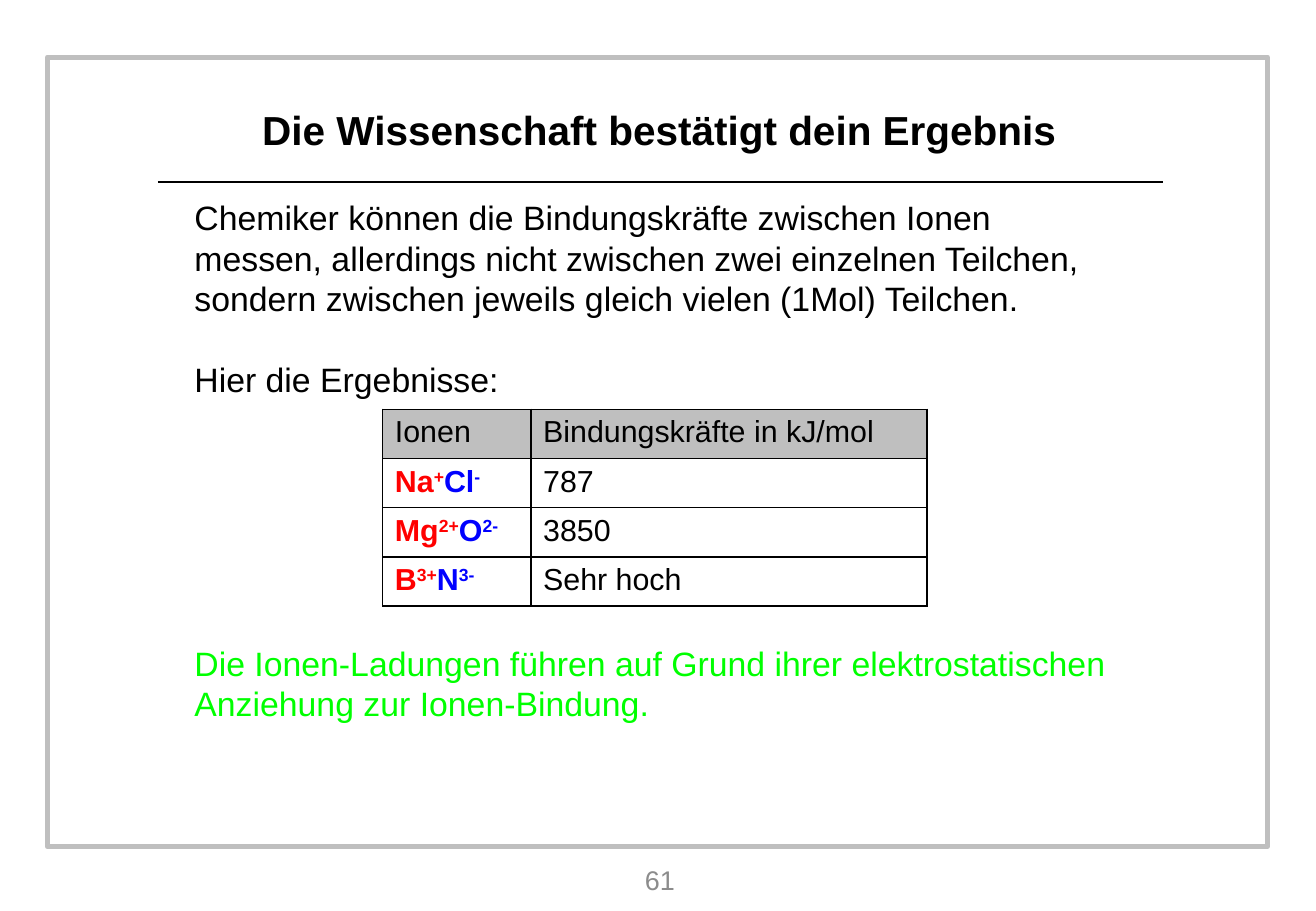
from lxml import etree
from pptx import Presentation
from pptx.dml import color
from pptx.enum import shapes, text
from pptx.oxml import ns
from pptx.util import Inches, Pt

BLACK, GREY, RED, BLUE, GREEN = "000000", "BFBFBF", "FF0000", "0000FF", "00FF00"
IONS = [
    (("Na", "+"), ("Cl", "-"), "787"),
    (("Mg", "2+"), ("O", "2-"), "3850"),
    (("B", "3+"), ("N", "3-"), "Sehr hoch"),
]
BODY = [
    ("Chemiker können die Bindungskräfte zwischen Ionen messen, allerdings nicht "
     "zwischen zwei einzelnen Teilchen, sondern zwischen jeweils gleich vielen "
     "(1Mol) Teilchen.", BLACK, 0),
    ("Hier die Ergebnisse:", BLACK, 1),
    ("Die Ionen-Ladungen führen auf Grund ihrer elektrostatischen Anziehung zur "
     "Ionen-Bindung.", GREEN, 6),
]
LINE_PITCH = 24


def rgb(value):
    """Turn a hex string into a colour."""
    return color.RGBColor.from_string(value)


def style(span, size, shade=BLACK, bold=False):
    """Format the font of one run."""
    span.font.name = "Arial"
    span.font.size = Pt(size)
    span.font.bold = bold
    span.font.color.rgb = rgb(shade)


def place(shape, left, top, width, height):
    """Move and size a shape, in inches."""
    shape.left, shape.top = Inches(left), Inches(top)
    shape.width, shape.height = Inches(width), Inches(height)


def add_frame(page):
    """Draw the grey page frame and the rule under the title."""
    frame = page.shapes.add_shape(shapes.MSO_SHAPE.RECTANGLE, Inches(0.39),
                                  Inches(0.47), Inches(10.04), Inches(6.5))
    frame.shadow.inherit = False
    frame.fill.background()
    frame.line.color.rgb = rgb(GREY)
    frame.line.width = Pt(3)
    rule = page.shapes.add_connector(shapes.MSO_CONNECTOR.STRAIGHT, Inches(1.3),
                                     Inches(1.5), Inches(9.57), Inches(1.5))
    rule.line.color.rgb = rgb(BLACK)
    rule.line.width = Pt(1.5)
    etree.SubElement(rule._element.spPr, ns.qn("a:effectLst"))


def set_centred(box, words, size, shade, bold=False):
    """Write one centred line in a box."""
    frame = box.text_frame
    frame.text = words
    frame.word_wrap = True
    frame.auto_size = text.MSO_AUTO_SIZE.NONE
    frame.vertical_anchor = text.MSO_ANCHOR.MIDDLE
    para = frame.paragraphs[0]
    para.alignment = text.PP_ALIGN.CENTER
    style(para.runs[0], size, shade, bold)


def fill_body(box):
    """Write the unbulleted body paragraphs with gaps in whole lines."""
    frame = box.text_frame
    frame.text = "\n".join(words for words, _, _ in BODY)
    frame.auto_size = text.MSO_AUTO_SIZE.NONE
    frame.vertical_anchor = text.MSO_ANCHOR.TOP
    for para, (_, shade, gap) in zip(frame.paragraphs, BODY):
        para.line_spacing = Pt(LINE_PITCH)
        para.space_before = Pt(gap * LINE_PITCH)
        para.space_after = Pt(0)
        properties = para._p.get_or_add_pPr()
        properties.set("marL", "0")
        properties.set("indent", "0")
        etree.SubElement(properties, ns.qn("a:buNone"))
        style(para.runs[0], 20, shade)


def add_borders(cell):
    """Give a cell thin black lines on all four sides."""
    properties = cell._tc.get_or_add_tcPr()
    for index, side in enumerate(("lnL", "lnR", "lnT", "lnB")):
        line = etree.Element(ns.qn(f"a:{side}"), w=str(Pt(1)))
        fill = etree.SubElement(line, ns.qn("a:solidFill"))
        etree.SubElement(fill, ns.qn("a:srgbClr"), val=BLACK)
        properties.insert(index, line)


def write_cell(cell, words):
    """Write a plain table entry."""
    cell.text = words
    style(cell.text_frame.paragraphs[0].runs[0], 18)


def write_ions(cell, cation, anion):
    """Write a red cation and a blue anion with raised charges."""
    para = cell.text_frame.paragraphs[0]
    for (symbol, charge), shade in ((cation, RED), (anion, BLUE)):
        for words, raised in ((symbol, 0), (charge, 30000)):
            span = para.add_run()
            span.text = words
            style(span, 18, shade, True)
            if raised:
                span._r.get_or_add_rPr().set("baseline", str(raised))


def add_ion_table(page):
    """Add the table of binding forces."""
    table = page.shapes.add_table(len(IONS) + 1, 2, Inches(3.15), Inches(3.37),
                                  Inches(4.48), Inches(1.62)).table
    table.first_row = table.horz_banding = False
    for column, width in zip(table.columns, (1.22, 3.26)):
        column.width = Inches(width)
    write_cell(table.cell(0, 0), "Ionen")
    write_cell(table.cell(0, 1), "Bindungskräfte in kJ/mol")
    for row, (cation, anion, force) in enumerate(IONS, 1):
        write_ions(table.cell(row, 0), cation, anion)
        write_cell(table.cell(row, 1), force)
    for index, cell in enumerate(table.iter_cells()):
        if index < 2:
            cell.fill.solid()
            cell.fill.fore_color.rgb = rgb(GREY)
        else:
            cell.fill.background()
        add_borders(cell)


def main():
    """Build and save the slide."""
    deck = Presentation()
    deck.slide_width, deck.slide_height = Inches(10.83), Inches(7.5)
    page = deck.slides.add_slide(deck.slide_layouts[1])
    add_frame(page)
    title, body = page.shapes.title, page.placeholders[1]
    place(title, 1.49, 0.67, 7.87, 0.79)
    set_centred(title, "Die Wissenschaft bestätigt dein Ergebnis", 24, BLACK, True)
    place(body, 1.5, 1.57, 7.87, 4.72)
    fill_body(body)
    number = page.shapes.add_textbox(Inches(4.21), Inches(7.05), Inches(2.44), Inches(0.39))
    set_centred(number, "61", 16, "8C8C8C")
    add_ion_table(page)
    deck.save("out.pptx")


if __name__ == "__main__":
    main()
